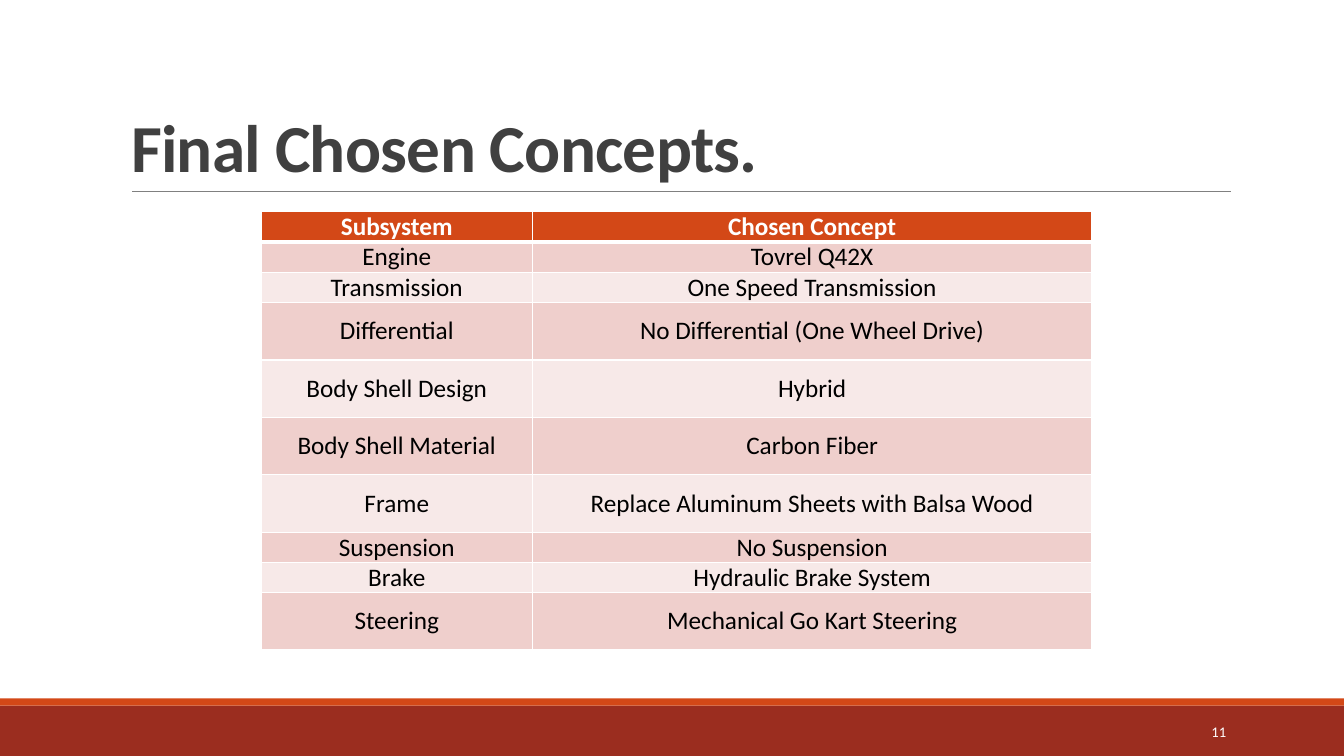
from dataclasses import dataclass

from pptx import Presentation
from pptx.dml.color import RGBColor
from pptx.enum.shapes import MSO_CONNECTOR as Connector, MSO_SHAPE as Shape
from pptx.enum.text import MSO_ANCHOR as Anchor, MSO_AUTO_SIZE as AutoSize, PP_ALIGN as Align
from pptx.oxml.ns import qn
from pptx.util import Inches, Pt
from lxml.etree import SubElement

# Content
TITLE = "Final Chosen Concepts."
PAGE_NUMBER = "11"
ROWS = [  # subsystem, chosen concept, row height
    ("Subsystem", "Chosen Concept", 0.3),
    ("Engine", "Tovrel Q42X", 0.29),
    ("Transmission", "One Speed Transmission", 0.28),
    ("Differential", "No Differential (One Wheel Drive)", 0.57),
    ("Body Shell Design", "Hybrid", 0.57),
    ("Body Shell Material", "Carbon Fiber", 0.57),
    ("Frame", "Replace Aluminum Sheets with Balsa Wood", 0.57),
    ("Suspension", "No Suspension", 0.28),
    ("Brake", "Hydraulic Brake System", 0.28),
    ("Steering", "Mechanical Go Kart Steering", 0.56),
]
COLUMN_WIDTHS = (2.69, 5.55)
BANDS = [(7, 0.5, "band"), (6.93, 0.07, "accent")]  # top, height, colour


@dataclass(frozen=True)
class Theme:
    font: str = "Calibri"
    band: str = "9B2D1F"
    accent: str = "D34817"
    rule: str = "808080"
    title: str = "404040"
    body: str = "000000"
    white: str = "FFFFFF"
    stripes: tuple = ("F7E9E8", "EFCFCC")
    title_size: float = 48
    table_size: float = 18
    page_size: float = 10.5


THEME = Theme()


def rgb(value):
    return RGBColor.from_string(value)


def paint(fill, color):
    fill.solid()
    fill.fore_color.rgb = rgb(color)


def write(frame, text, size, color, align=None, bold=False):
    para = frame.paragraphs[0]
    para.alignment = align
    span = para.add_run()
    span.text = text
    formats = {"name": THEME.font, "size": Pt(size), "bold": bold}
    for name, value in formats.items():
        setattr(span.font, name, value)
    span.font.color.rgb = rgb(color)
    return para, span


def add_borders(cell, widths):
    properties = cell._tc.get_or_add_tcPr()
    for side, width in widths.items():
        line = SubElement(properties, qn(f"a:ln{side}"), w=str(Pt(width)))
        fill = SubElement(line, qn("a:solidFill"))
        SubElement(fill, qn("a:srgbClr"), val=THEME.white)


def add_backdrop(page):
    for top, height, color in BANDS:
        band = page.shapes.add_shape(
            Shape.RECTANGLE, 0, Inches(top), Inches(13.33), Inches(height))
        band.shadow.inherit = False
        paint(band.fill, getattr(THEME, color))
        band.line.fill.background()
    rule = page.shapes.add_connector(
        Connector.STRAIGHT, Inches(1.31), Inches(1.9), Inches(12.21), Inches(1.9))
    rule.line.color.rgb = rgb(THEME.rule)
    rule.line.width = Pt(0.5)
    SubElement(rule._element.spPr, qn("a:effectLst"))


def add_title(page):
    title = page.shapes.title
    place = {"left": 1.2, "top": 0.31, "width": 11, "height": 1.59}
    for name, value in place.items():
        setattr(title, name, Inches(value))
    frame = title.text_frame
    formats = {"vertical_anchor": Anchor.BOTTOM, "word_wrap": True, "auto_size": AutoSize.NONE}
    for name, value in formats.items():
        setattr(frame, name, value)
    para, span = write(frame, TITLE, THEME.title_size, THEME.title, Align.LEFT, True)
    para.line_spacing = 0.85
    span.font._element.set("spc", "-50")


def add_page_number(page):
    box = page.shapes.add_textbox(Inches(10.83), Inches(7.06), Inches(1.43), Inches(0.4))
    frame = box.text_frame
    frame.word_wrap = True
    frame.vertical_anchor = Anchor.MIDDLE
    write(frame, PAGE_NUMBER, THEME.page_size, THEME.white, Align.RIGHT)


def add_concept_table(page):
    table = page.shapes.add_table(
        len(ROWS), len(COLUMN_WIDTHS), Inches(2.59), Inches(2.1),
        Inches(sum(COLUMN_WIDTHS)), Inches(sum(row[-1] for row in ROWS))).table
    for column, width in zip(table.columns, COLUMN_WIDTHS):
        column.width = Inches(width)
    cell_format = {"vertical_anchor": Anchor.MIDDLE, "margin_left": 0,
                   "margin_right": 0, "margin_top": 0, "margin_bottom": 0}
    for index, (*texts, height) in enumerate(ROWS):
        table.rows[index].height = Inches(height)
        header = index == 0
        # The heavy line under the header is shared with the first body row
        borders = {"L": 1, "R": 1, "T": 3 if index == 1 else 1, "B": 3 if header else 1}
        for cell, text in zip(table.rows[index].cells, texts):
            for name, value in cell_format.items():
                setattr(cell, name, value)
            add_borders(cell, borders)
            paint(cell.fill, THEME.accent if header else THEME.stripes[index % 2])
            write(cell.text_frame, text, THEME.table_size,
                  THEME.white if header else THEME.body, Align.CENTER, header)


def main():
    deck = Presentation()
    deck.slide_width, deck.slide_height = Inches(13.33), Inches(7.5)
    page = deck.slides.add_slide(deck.slide_layouts[5])
    paint(page.background.fill, THEME.white)
    add_backdrop(page)
    add_title(page)
    add_page_number(page)
    add_concept_table(page)
    deck.save("out.pptx")


if __name__ == "__main__":
    main()
